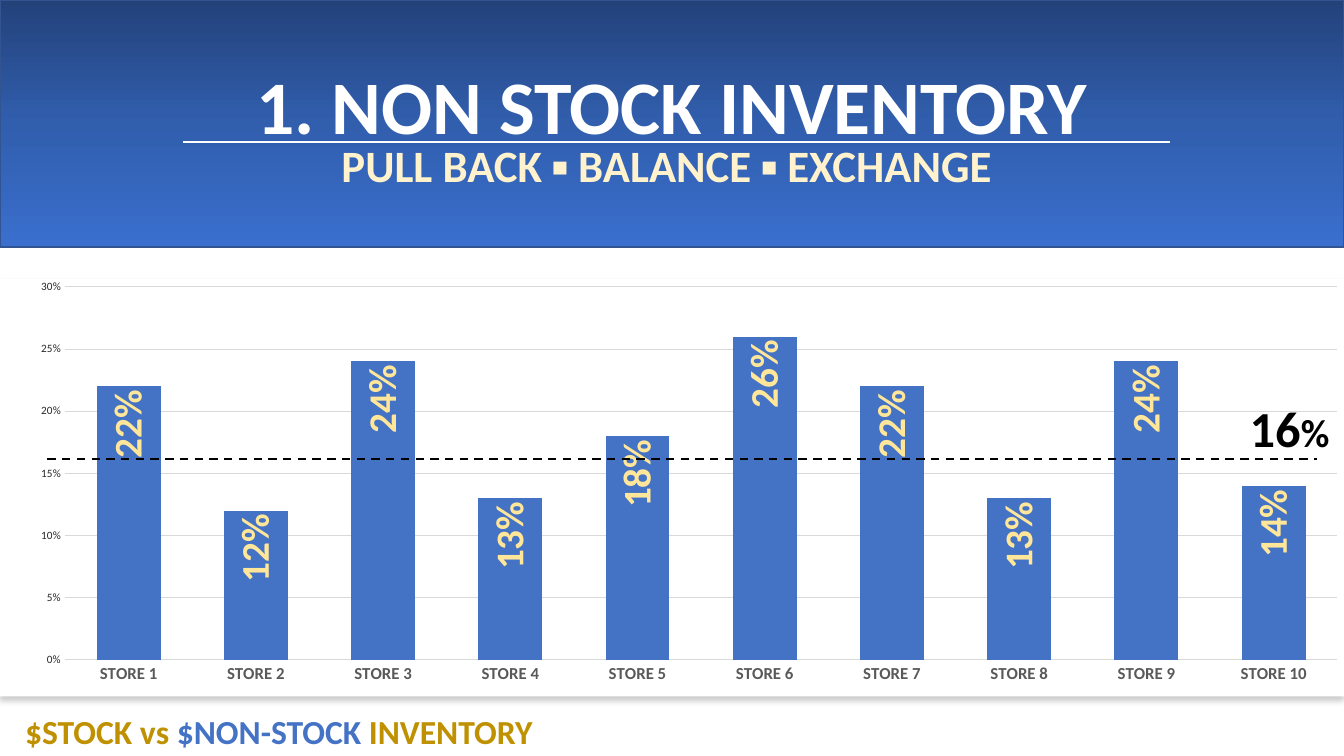
import copy

import pptx
import pptx.chart.data
import pptx.dml.color
import pptx.enum.chart
import pptx.enum.dml
import pptx.enum.shapes
import pptx.enum.text
import pptx.oxml
import pptx.oxml.ns
import pptx.util
from pptx.util import Inches

FONT = "Calibri"
WHITE, BLACK, BLUE, GOLD = "FFFFFF", "000000", "4472C4", "BF9000"
GRID = "D9D9D9"
SLIDE_WIDTH = 13.33
RATES = [0.22, 0.12, 0.24, 0.13, 0.18, 0.26, 0.22, 0.13, 0.24, 0.14]
CENTER = pptx.enum.text.PP_ALIGN.CENTER
LEFT = pptx.enum.text.PP_ALIGN.LEFT
A_NAMESPACE = pptx.oxml.ns.nsdecls("a")


def color(hex_string):
    return pptx.dml.color.RGBColor.from_string(hex_string)


def style_font(font, size, hex_string, bold=False):
    font.name = FONT
    font.size = pptx.util.Pt(size)
    font.bold = bold
    font.color.rgb = color(hex_string)


def style_line(line, hex_string, width):
    line.color.rgb = color(hex_string)
    line.width = pptx.util.Pt(width)


def place(shape, left, top, width, height):
    shape.left, shape.top = Inches(left), Inches(top)
    shape.width, shape.height = Inches(width), Inches(height)


def fill_text(shape, runs, size, alignment=CENTER, inset=None):
    """Write runs of (text, colour, size) into one bold paragraph."""
    frame = shape.text_frame
    frame.word_wrap = True
    frame.auto_size = pptx.enum.text.MSO_AUTO_SIZE.SHAPE_TO_FIT_TEXT
    frame.vertical_anchor = pptx.enum.text.MSO_ANCHOR.TOP
    if inset is not None:
        frame.margin_left = frame.margin_right = Inches(inset)
        frame.margin_top = frame.margin_bottom = Inches(inset)
    paragraph = frame.paragraphs[0]
    paragraph.alignment = alignment
    paragraph.line_spacing = 1.0
    style_font(paragraph.font, size, runs[0][1], True)
    for text, hex_string, run_size in runs:
        run = paragraph.add_run()
        run.text = text
        style_font(run.font, run_size, hex_string, True)
    return paragraph


def add_text(slide, box, runs, size, alignment=CENTER, inset=None):
    shape = slide.shapes.add_textbox(*map(Inches, box))
    return fill_text(shape, runs, size, alignment, inset)


def add_rectangle(slide, top, height):
    shape = slide.shapes.add_shape(
        pptx.enum.shapes.MSO_SHAPE.RECTANGLE,
        0, Inches(top), Inches(SLIDE_WIDTH), Inches(height))
    shape.shadow.inherit = False
    return shape


def add_banner(slide):
    banner = add_rectangle(slide, 0, 2.45)
    banner.fill.gradient()
    banner.fill.gradient_angle = 270
    stop_list = next(banner._element.spPr.iter(pptx.oxml.ns.qn("a:gsLst")))
    stop_list.insert(1, copy.deepcopy(stop_list[0]))
    stops = [(0, "23427A"), (0.5, "315EAD"), (1, "3A6FCE")]
    for stop, (position, hex_string) in zip(banner.fill.gradient_stops, stops):
        stop.position = position
        stop.color.rgb = color(hex_string)
    style_line(banner.line, "325491", 1)


def add_panel(slide):
    panel = add_rectangle(slide, 2.77, 4.14)
    panel.fill.solid()
    panel.fill.fore_color.rgb = color(WHITE)
    panel.line.fill.background()
    effects = panel._element.spPr.find(pptx.oxml.ns.qn("a:effectLst"))
    effects.append(pptx.oxml.parse_xml(
        f'<a:outerShdw {A_NAMESPACE} blurRad="{pptx.util.Pt(4)}" '
        f'dist="{pptx.util.Pt(3)}" dir="5400000" algn="t" rotWithShape="0">'
        f'<a:srgbClr val="{BLACK}"><a:alpha val="20000"/></a:srgbClr>'
        '</a:outerShdw>'))


def add_rule(slide, left, right, y, hex_string, dashed=False):
    rule = slide.shapes.add_connector(
        pptx.enum.shapes.MSO_CONNECTOR.STRAIGHT,
        Inches(left), Inches(y), Inches(right), Inches(y))
    style_line(rule.line, hex_string, 1.5)
    if dashed:
        rule.line.dash_style = pptx.enum.dml.MSO_LINE.DASH
    rule._element.spPr.append(
        pptx.oxml.parse_xml(f"<a:effectLst {A_NAMESPACE}/>"))


def set_plot_layout(chart, left, top, width, height):
    plot_area = chart._chartSpace.chart.plotArea
    for layout in plot_area.findall(pptx.oxml.ns.qn("c:layout")):
        plot_area.remove(layout)
    values = {"x": left, "y": top, "w": width, "h": height}
    sizes = "".join(f'<c:{key} val="{value}"/>' for key, value in values.items())
    plot_area.insert(0, pptx.oxml.parse_xml(
        f'<c:layout {pptx.oxml.ns.nsdecls("c")}><c:manualLayout>'
        '<c:layoutTarget val="inner"/><c:xMode val="edge"/>'
        f'<c:yMode val="edge"/>{sizes}</c:manualLayout></c:layout>'))


def style_axes(chart):
    no_tick = pptx.enum.chart.XL_TICK_MARK.NONE
    for axis in (chart.category_axis, chart.value_axis):
        axis.major_tick_mark = axis.minor_tick_mark = no_tick
    stores, rates = chart.category_axis, chart.value_axis
    style_font(stores.tick_labels.font, 12, "595959", True)
    style_line(stores.format.line, GRID, 0.75)
    style_font(rates.tick_labels.font, 8, "262626")
    rates.tick_labels.number_format = "0%"
    rates.tick_labels.number_format_is_linked = False
    rates.format.line.fill.background()
    rates.has_major_gridlines = True
    style_line(rates.major_gridlines.format.line, GRID, 0.75)
    rates.minimum_scale, rates.maximum_scale, rates.major_unit = 0, 0.3, 0.05


def style_columns(plot):
    plot.gap_width, plot.overlap = 99, 100
    plot.vary_by_categories = False
    series = plot.series[0]
    series.invert_if_negative = False
    series.format.fill.solid()
    series.format.fill.fore_color.rgb = color(BLUE)
    labels = series.data_labels
    labels.show_value = True
    labels.number_format = "0%"
    labels.number_format_is_linked = False
    labels.position = pptx.enum.chart.XL_LABEL_POSITION.INSIDE_END
    style_font(labels.font, 28, "FFE699", True)
    # Labels read upwards
    body = next(labels._element.iter(pptx.oxml.ns.qn("a:bodyPr")))
    body.set("rot", "-5400000")
    body.set("vert", "horz")


def add_store_chart(slide):
    data = pptx.chart.data.CategoryChartData(number_format="0%")
    data.categories = [f"STORE {number}" for number in range(1, len(RATES) + 1)]
    data.add_series("Series 1", RATES)
    chart = slide.shapes.add_chart(
        pptx.enum.chart.XL_CHART_TYPE.COLUMN_STACKED,
        Inches(0.13), Inches(2.77), Inches(13.2), Inches(4.06), data).chart
    chart.has_legend = chart.has_title = False
    style_font(chart.font, 10, BLACK)
    set_plot_layout(chart, 0.039, 0.019, 0.956, 0.911)
    style_axes(chart)
    style_columns(chart.plots[0])


def main():
    presentation = pptx.Presentation()
    presentation.slide_width = Inches(SLIDE_WIDTH)
    presentation.slide_height = Inches(7.5)
    slide = presentation.slides.add_slide(presentation.slide_layouts[5])

    # Header; the title goes in front of the banner
    add_banner(slide)
    title = slide.shapes.title
    slide.shapes._spTree.append(title._element)
    place(title, 0, 0.53, SLIDE_WIDTH, 1.01)
    fill_text(title, [("1. NON STOCK INVENTORY", WHITE, 54)], 54)
    add_text(slide, (0, 1.32, SLIDE_WIDTH, 0.64),
             [("PULL BACK ▪ BALANCE ▪ EXCHANGE ", "FFF2CC", 32)], 32)
    add_rule(slide, 1.82, 11.6, 1.41, WHITE)

    # Chart on its panel
    add_panel(slide)
    add_store_chart(slide)

    # Caption
    add_text(slide, (0.25, 7.05, 9.46, 0.4),
             [("$STOCK vs ", GOLD, 24), ("$NON-STOCK ", BLUE, 24),
              ("INVENTORY", GOLD, 24)], 24, LEFT, 0)

    # Average line and its value
    add_rule(slide, 0.47, 13.06, 4.55, BLACK, dashed=True)
    average = add_text(slide, (12.19, 4.01, 1.2, 0.55),
                       [("16", BLACK, 36), ("%", BLACK, 28)], 36, CENTER, 0)
    average.line_spacing = 0.9

    presentation.save("out.pptx")


if __name__ == "__main__":
    main()
